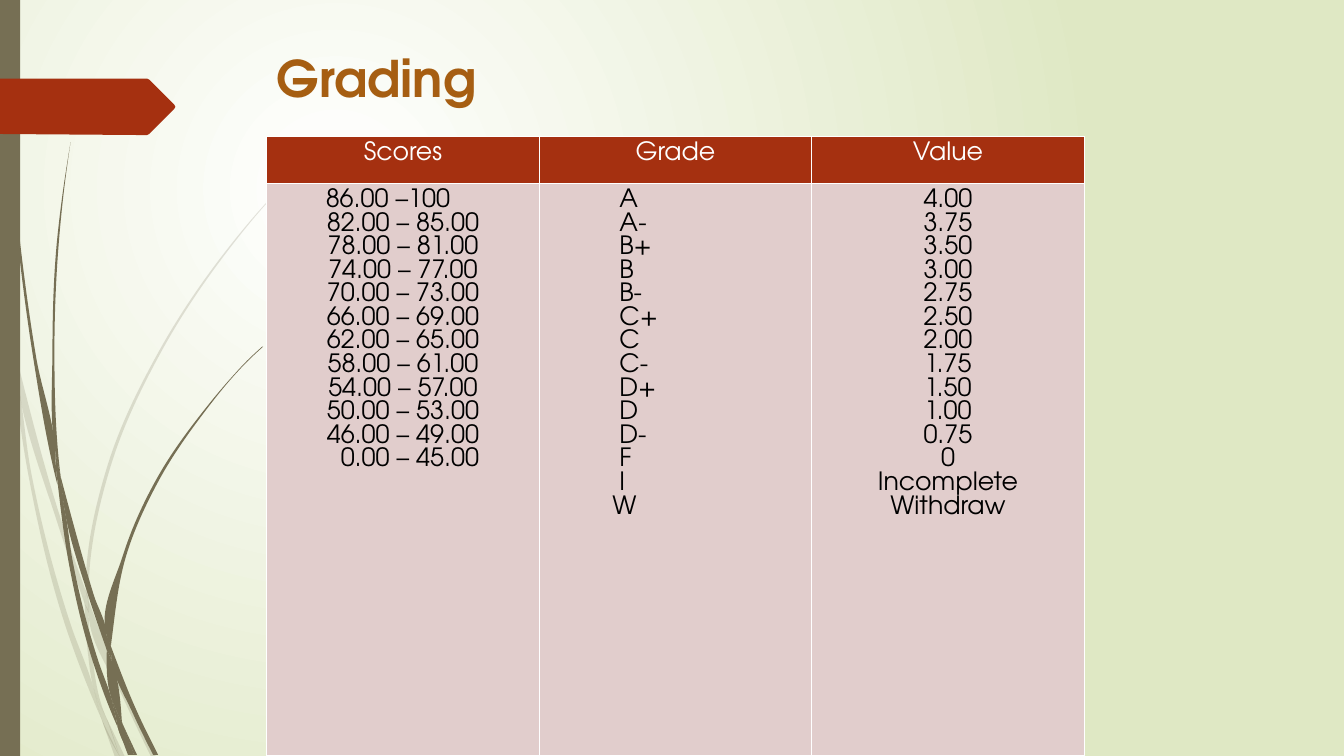
from dataclasses import dataclass

from lxml.etree import SubElement
from pptx import Presentation
from pptx.dml.color import RGBColor
from pptx.enum.shapes import MSO_SHAPE
from pptx.enum.text import MSO_ANCHOR, PP_ALIGN as Align
from pptx.oxml.ns import qn
from pptx.util import Pt

FONT = "TeX Gyre Adventor"
BROWN, RED, ROSE, WHITE, BLACK = "766F54", "A53010", "E1CDCC", "FFFFFF", "000000"
GRID = Pt(0.72)  # one step of the outline coordinates

Point = tuple[int, int]


@dataclass
class Blade:
    """A sliver of grass between two smooth edges, in grid steps."""
    outward: list[Point]
    back: list[Point]


@dataclass
class Line:
    text: str
    align: Align = Align.CENTER
    indent: float = 0


@dataclass
class Column:
    heading: str
    lines: list[Line]


PALE_BLADES = [
    Blade([(11, 350), (9, 322), (0, 282)], [(0, 299), (10, 344), (11, 350)]),
    Blade([(14, 345), (17, 376), (58, 522), (84, 599)], [(85, 586), (62, 520), (14, 345)]),
    Blade([(88, 596), (92, 607), (127, 692), (155, 751)],
          [(150, 751), (123, 694), (88, 610), (88, 596)]),
    Blade([(105, 711), (124, 751)], [(119, 751), (105, 711)]),
    Blade([(11, 350), (17, 376), (31, 469), (70, 619), (93, 683), (99, 707), (101, 714)],
          [(101, 714), (92, 693), (65, 621), (28, 470), (11, 350)]),
    Blade([(84, 599), (87, 646), (93, 683), (96, 692), (105, 711)],
          [(105, 711), (103, 706), (91, 646), (88, 610), (88, 608), (84, 599)]),
    Blade([(88, 596), (88, 584), (110, 462), (160, 349), (229, 245), (268, 198), (290, 175),
           (312, 154)],
          [(312, 153), (289, 175), (268, 197), (228, 244), (158, 348), (107, 461), (85, 584),
           (85, 586), (88, 596)]),
    Blade([(101, 714), (114, 751)], [(119, 751), (101, 714)]),
    Blade([(88, 608), (88, 596), (85, 586)], [(84, 599), (88, 608)]),
    Blade([(93, 683), (99, 707), (101, 714), (119, 751)],
          [(119, 751), (105, 711), (96, 692), (93, 683)]),
]

DARK_BLADES = [
    Blade([(3, 0), (4, 48), (7, 110), (17, 233), (33, 355), (56, 477), (57, 481)],
          [(55, 457), (55, 453), (36, 355), (19, 232), (8, 109), (5, 48), (4, 0)]),
    Blade([(60, 472), (64, 505), (88, 592), (106, 645)],
          [(106, 633), (106, 631), (93, 590), (60, 472)]),
    Blade([(110, 641), (113, 649), (136, 706), (157, 749)],
          [(152, 749), (132, 708), (111, 656), (110, 641)]),
    Blade([(57, 477), (64, 505), (72, 556), (98, 657), (110, 691), (116, 717), (117, 722)],
          [(117, 722), (111, 708), (93, 659), (68, 557), (57, 477)]),
    Blade([(70, 141), (63, 193), (58, 245), (54, 349), (58, 453), (60, 472)],
          [(60, 472), (55, 449), (52, 349), (56, 245), (62, 193), (70, 141)]),
    Blade([(122, 719), (136, 749)], [(133, 749), (122, 719)]),
    Blade([(55, 449), (55, 453), (57, 477), (64, 505)], [(60, 472), (55, 449)]),
    Blade([(110, 641), (111, 633), (125, 552), (158, 476), (205, 406), (231, 374), (245, 359),
           (261, 344)],
          [(260, 344), (245, 358), (231, 373), (204, 405), (156, 474), (122, 551), (106, 631),
           (110, 641)]),
    Blade([(117, 722), (127, 749)], [(131, 749), (117, 722)]),
    Blade([(106, 645), (110, 691), (116, 706), (122, 719)],
          [(121, 716), (111, 656), (109, 651), (106, 645)]),
    Blade([(106, 645), (109, 651), (111, 656)], [(110, 641), (106, 631), (106, 645)]),
    Blade([(110, 691), (116, 717), (117, 722), (130, 749)],
          [(133, 749), (122, 719), (116, 706), (110, 691)]),
]

ARROW = [(173, 108), (148, 133), (146, 134), (136, 134), (0, 133), (0, 78), (136, 78),
         (146, 78), (148, 79), (173, 104), (174, 106)]

RANGES = ["82.00 – 85.00", "78.00 – 81.00", "74.00 – 77.00", "70.00 – 73.00", "66.00 – 69.00",
          "62.00 – 65.00", "58.00 – 61.00", "54.00 – 57.00", "50.00 – 53.00", "46.00 – 49.00"]
GRADES = ["A", "A-", "B+", "B", "B-", "C+", "C", "C-", "D+", "D", "D-", "F", "I"]
VALUES = ["4.00", "3.75", "3.50", "3.00", "2.75", "2.50", "2.00", "1.75", "1.50", "1.00",
          "0.75", "0", "Incomplete", "Withdraw"]

COLUMNS = [
    Column("Scores", [Line("86.00 –100", Align.LEFT, 35), *map(Line, RANGES),
                      Line("0.00 – 45.00", indent=10)]),
    Column("Grade", [*(Line(grade, Align.LEFT, 50) for grade in GRADES),
                     Line("W", Align.LEFT, 45)]),
    Column("Value", [Line(value) for value in VALUES]),
]


def color(code: str) -> RGBColor:
    return RGBColor.from_string(code)


def curve_spans(edge: list[Point]) -> list[tuple[complex, complex, complex]]:
    """Return two control points and an end for each span of a smooth edge."""
    knots = [complex(*point) for point in edge]
    lengths = [abs(b - a) for a, b in zip(knots, knots[1:])]
    slopes = [(b - a) / h for a, b, h in zip(knots, knots[1:], lengths)]
    inner = [(s * k + t * h) / (h + k)
             for s, t, h, k in zip(slopes, slopes[1:], lengths, lengths[1:])]
    if inner:
        tangents = [(3 * slopes[0] - inner[0]) / 2, *inner, (3 * slopes[-1] - inner[-1]) / 2]
    else:
        tangents = slopes * 2
    return [(a + m * h / 3, b - n * h / 3, b)
            for a, b, m, n, h in zip(knots, knots[1:], tangents, tangents[1:], lengths)]


def paint(shape, code: str, opacity: int = 100) -> None:
    shape.shadow.inherit = False
    shape.fill.solid()
    shape.fill.fore_color.rgb = color(code)
    shape.line.fill.background()
    if opacity < 100:
        tint = shape.element.spPr.find(f"{qn('a:solidFill')}/{qn('a:srgbClr')}")
        SubElement(tint, qn("a:alpha"), val=str(opacity * 1000))


def add_outline(slide, points: list[Point], code: str, opacity: int = 100):
    scaled = [(x * GRID, y * GRID) for x, y in points]
    builder = slide.shapes.build_freeform(*scaled[0])
    builder.add_line_segments(scaled[1:], close=True)
    shape = builder.convert_to_shape()
    paint(shape, code, opacity)
    return shape


def add_blade(slide, blade: Blade, opacity: int) -> None:
    """Draw the blade's knots, then bend its straight sides into curves."""
    shape = add_outline(slide, blade.outward + blade.back, BROWN, opacity)
    outline = shape.element.spPr.find(f".//{qn('a:path')}")
    for side in outline.findall(qn("a:lnTo")):
        outline.remove(side)
    tip, turn = blade.outward[-1], blade.back[0]
    joint = curve_spans([tip, turn]) if tip != turn else []
    for span in curve_spans(blade.outward) + joint + curve_spans(blade.back):
        curve = SubElement(outline, qn("a:cubicBezTo"))
        for point in span:
            SubElement(curve, qn("a:pt"), x=str(round(point.real * GRID) - shape.left),
                       y=str(round(point.imag * GRID) - shape.top))
    outline.append(outline.find(qn("a:close")))


def add_run(paragraph, text: str, size: float, code: str, bold: bool = False) -> None:
    run = paragraph.add_run()
    run.text = text
    run.font.name, run.font.size, run.font.bold = FONT, Pt(size), bold
    run.font.color.rgb = color(code)


def fill_cell(cell, lines: list[Line], fill: str, ink: str) -> None:
    properties = cell._tc.get_or_add_tcPr()
    for side in "LRTB":
        border = SubElement(properties, qn(f"a:ln{side}"), w=str(Pt(1)))
        SubElement(SubElement(border, qn("a:solidFill")), qn("a:srgbClr"), val=WHITE)
    cell.fill.solid()
    cell.fill.fore_color.rgb = color(fill)
    frame = cell.text_frame
    for index, line in enumerate(lines):
        paragraph = frame.add_paragraph() if index else frame.paragraphs[0]
        paragraph.alignment = line.align
        paragraph.line_spacing = Pt(16.85)
        if line.indent:
            paragraph._p.get_or_add_pPr().set("marL", str(Pt(line.indent)))
        add_run(paragraph, line.text, 18, ink)


def set_background(slide) -> None:
    """Spread a round gradient from white near the upper left."""
    fill = slide.background.fill
    fill.gradient()
    for stop, position, code in zip(fill.gradient_stops, (0, 1), (WHITE, "DFE8C4")):
        stop.position, stop.color.rgb = position, color(code)
    gradient = slide.element.find(f".//{qn('a:gradFill')}")
    gradient.remove(gradient.find(qn("a:lin")))
    circle = SubElement(gradient, qn("a:path"), path="circle")
    SubElement(circle, qn("a:fillToRect"), l="50000", t="50000", r="100000", b="100000")


def main() -> None:
    presentation = Presentation()
    presentation.slide_width, presentation.slide_height = Pt(960), Pt(540)
    slide = presentation.slides.add_slide(presentation.slide_layouts[5])
    set_background(slide)

    for blades, opacity in ((PALE_BLADES, 20), (DARK_BLADES, 100)):
        for blade in blades:
            add_blade(slide, blade, opacity)
    paint(slide.shapes.add_shape(MSO_SHAPE.RECTANGLE, 0, 0, Pt(14.4), Pt(540)), BROWN)
    add_outline(slide, ARROW, RED)

    title = slide.shapes.title
    title.left, title.top, title.width, title.height = Pt(190.5), Pt(29.9), Pt(702), Pt(67.7)
    title.text_frame.vertical_anchor = MSO_ANCHOR.TOP
    heading = title.text_frame.paragraphs[0]
    heading.alignment = Align.LEFT
    add_run(heading, "Grading", 36, "A65E12", bold=True)

    table = slide.shapes.add_table(2, len(COLUMNS), Pt(190.5), Pt(97.5), Pt(584), Pt(442)).table
    table.rows[0].height, table.rows[1].height = Pt(33.8), Pt(408.2)
    for index, column in enumerate(COLUMNS):
        fill_cell(table.cell(0, index), [Line(column.heading)], RED, WHITE)
        fill_cell(table.cell(1, index), column.lines, ROSE, BLACK)
    presentation.save("out.pptx")


if __name__ == "__main__":
    main()
